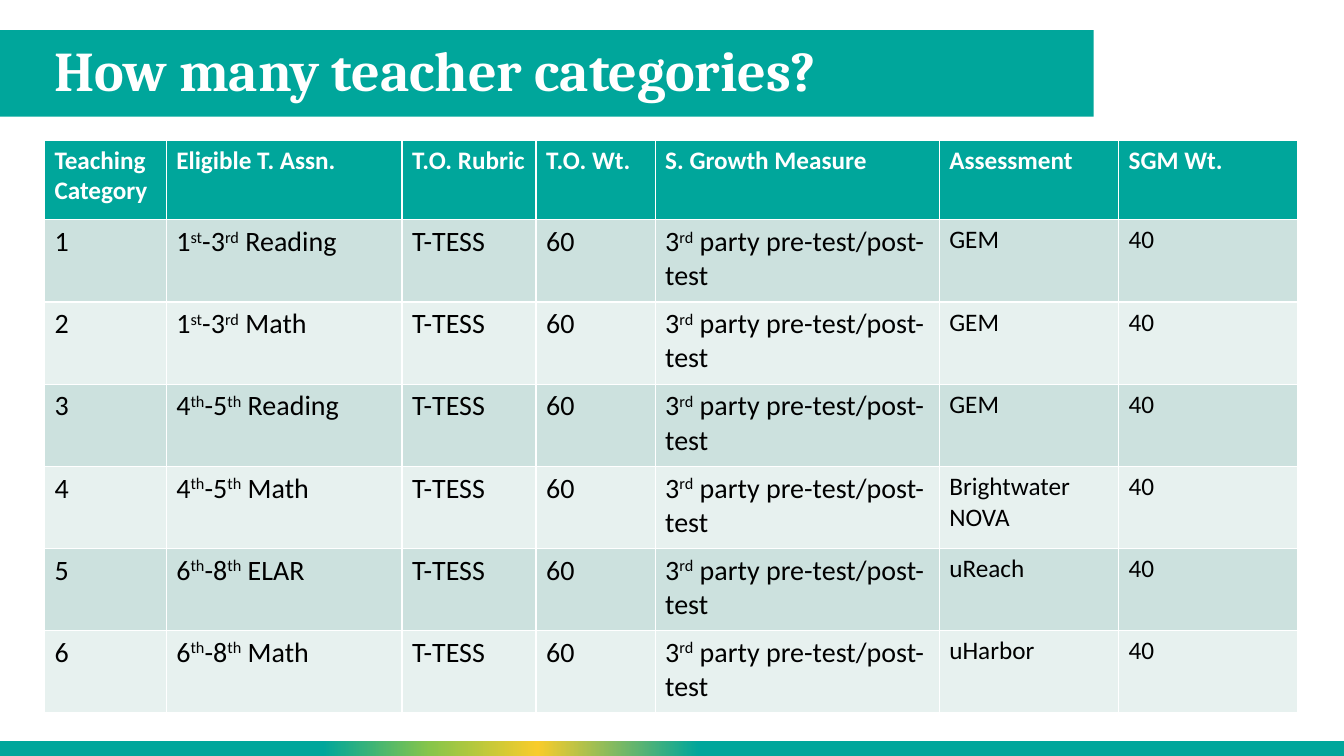
from dataclasses import dataclass
from lxml.etree import SubElement
from pptx import Presentation
from pptx.dml.color import RGBColor as Rgb
from pptx.enum.shapes import MSO_SHAPE as Shape
from pptx.enum.text import MSO_ANCHOR as Anchor, MSO_AUTO_SIZE as Fit, PP_ALIGN as Align
from pptx.oxml.ns import qn
from pptx.util import Cm, Pt

TITLE = "How many teacher categories?"
HEADS = ["Teaching Category", "Eligible T. Assn.", "T.O. Rubric", "T.O. Wt.",
         "S. Growth Measure", "Assessment", "SGM Wt."]
GROUPS = [
    ("1^st^-3^rd^ Reading", "GEM"),
    ("1^st^-3^rd^ Math", "GEM"),
    ("4^th^-5^th^ Reading", "GEM"),
    ("4^th^-5^th^ Math", "Brightwater NOVA"),
    ("6^th^-8^th^ ELAR", "uReach"),
    ("6^th^-8^th^ Math", "uHarbor"),
]
RUBRIC, RUBRIC_WT = "T-TESS", "60"
GROWTH, GROWTH_WT = "3^rd^ party pre-test/post-test", "40"

WIDTHS = [3.07, 5.94, 3.38, 3, 7.16, 4.52, 4.52]
HEAD_H, ROW_H = 2.01, 2.07
LEFT, TOP = 1.12, 3.53
BAR_TOP, BAR_W, BAR_H = 0.76, 27.56, 2.18
PAGE_W, PAGE_H, FOOT_H = 33.87, 19.05, 0.38


@dataclass(frozen=True)
class Theme:
    teal: str = "00A69B"
    gold: str = "F8CC2B"
    green: str = "87C54A"
    bands: tuple = ("CCE1DE", "E7F1EF")
    white: str = "FFFFFF"
    black: str = "000000"
    serif: str = "Cambria"
    sans: str = "Calibri"
    title: int = 40
    large: int = 20
    small: int = 18


THEME = Theme()
STOPS = [(0, THEME.teal), (48, THEME.teal), (60, THEME.gold),
         (68, THEME.green), (76, THEME.teal), (100, THEME.teal)]


def write(para, text, face, size, color, bold=False):
    for i, part in enumerate(text.split("^")):
        run = para.add_run()
        run.text = part
        font = run.font
        font.name, font.size, font.bold = face, Pt(size), bold
        font.color.rgb = Rgb.from_string(color)
        if i % 2:
            run._r.get_or_add_rPr().set("baseline", "30000")


def paint(fill, color):
    fill.solid()
    fill.fore_color.rgb = Rgb.from_string(color)


def add_bar(slide, top, width, height):
    bar = slide.shapes.add_shape(Shape.RECTANGLE, Cm(0), Cm(top), Cm(width), Cm(height))
    bar.shadow.inherit = False
    bar.line.fill.background()
    paint(bar.fill, THEME.teal)
    slide.shapes.title.element.addprevious(bar.element)
    return bar


def add_fade(bar):
    bar.fill.gradient()
    bar.fill.gradient_angle = 180
    stops = bar.element.spPr.find(".//" + qn("a:gsLst"))
    for old in list(stops):
        stops.remove(old)
    for place, color in STOPS:
        stop = SubElement(stops, qn("a:gs"), pos=str(place * 1000))
        SubElement(stop, qn("a:srgbClr"), val=color)


def add_title(slide):
    title = slide.shapes.title
    title.left, title.top = Cm(LEFT), Cm(BAR_TOP)
    title.width, title.height = Cm(BAR_W - LEFT), Cm(BAR_H)
    frame = title.text_frame
    frame.word_wrap, frame.auto_size = True, Fit.NONE
    frame.vertical_anchor = Anchor.MIDDLE
    para = frame.paragraphs[0]
    para.alignment, para.line_spacing = Align.LEFT, 0.9
    write(para, TITLE, THEME.serif, THEME.title, THEME.white, True)


def add_grid(slide):
    rows = [HEADS] + [
        [str(n), area, RUBRIC, RUBRIC_WT, GROWTH, test, GROWTH_WT]
        for n, (area, test) in enumerate(GROUPS, 1)
    ]
    high = HEAD_H + ROW_H * len(GROUPS)
    table = slide.shapes.add_table(len(rows), len(HEADS), Cm(LEFT), Cm(TOP),
                                   Cm(sum(WIDTHS)), Cm(high)).table
    for col, width in zip(table.columns, WIDTHS):
        col.width = Cm(width)
    for r, texts in enumerate(rows):
        head = r == 0
        table.rows[r].height = Cm(HEAD_H if head else ROW_H)
        back = THEME.teal if head else THEME.bands[(r - 1) % 2]
        color = THEME.white if head else THEME.black
        for c, text in enumerate(texts):
            cell = table.cell(r, c)
            paint(cell.fill, back)
            size = THEME.small if head or c >= 5 else THEME.large
            write(cell.text_frame.paragraphs[0], text, THEME.sans, size, color, head)


def main():
    deck = Presentation()
    deck.slide_width, deck.slide_height = Cm(PAGE_W), Cm(PAGE_H)
    slide = deck.slides.add_slide(deck.slide_layouts[5])
    add_bar(slide, BAR_TOP, BAR_W, BAR_H)
    add_fade(add_bar(slide, PAGE_H - FOOT_H, PAGE_W, FOOT_H))
    add_title(slide)
    add_grid(slide)
    deck.save("out.pptx")


if __name__ == "__main__":
    main()
